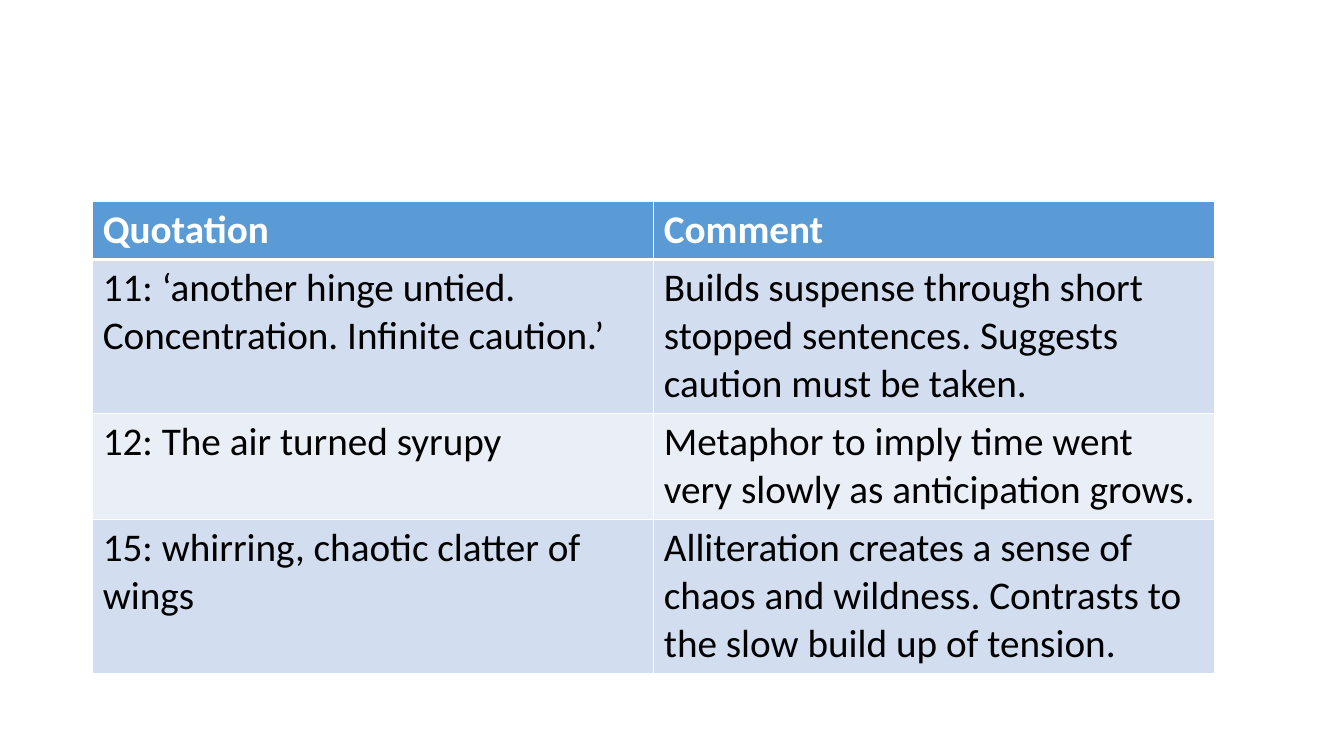
from lxml.etree import SubElement
from pptx import Presentation
from pptx.dml.color import RGBColor
from pptx.oxml.ns import qn
from pptx.util import Inches, Pt

COLORS = {"header": "5B9BD5", "odd": "D2DEEF", "even": "EAEFF7",
          "white": "FFFFFF", "black": "000000"}

ROWS = [
    (1, "Quotation", "Comment"),
    (3, "11: ‘another hinge untied. Concentration. Infinite caution.’",
     "Builds suspense through short stopped sentences. Suggests caution must be taken."),
    (2, "12: The air turned syrupy",
     "Metaphor to imply time went very slowly as anticipation grows."),
    (3, "15: whirring, chaotic clatter of wings",
     "Alliteration creates a sense of chaos and wildness. "
     "Contrasts to the slow build up of tension."),
]


class Deck:
    font = {"name": "Calibri", "size": Pt(28)}
    line_height = Inches(0.47)
    cell_padding = Inches(0.1)

    def __init__(self, width, height):
        self.prs = Presentation()
        self.prs.slide_width, self.prs.slide_height = Inches(width), Inches(height)
        self.s = self.prs.slides.add_slide(self.prs.slide_layouts[6])

    def x(self, share):
        return round(self.prs.slide_width * share)

    def y(self, share):
        return round(self.prs.slide_height * share)

    def text(self, tf, text, **fmt):
        r = tf.paragraphs[0].add_run()
        r.text = text
        color = fmt.pop("color")
        for name, value in {**self.font, **fmt}.items():
            setattr(r.font, name, value)
        r.font.color.rgb = RGBColor.from_string(COLORS[color])

    def borders(self, cell, **widths):
        tcPr = cell._tc.get_or_add_tcPr()
        for side in "LRTB":
            ln = SubElement(tcPr, qn(f"a:ln{side}"), w=str(Pt(widths.get(side, 1))))
            fill = SubElement(ln, qn("a:solidFill"))
            SubElement(fill, qn("a:srgbClr"), val=COLORS["white"])

    def cell(self, cell, row, text):
        header = row == 0
        self.borders(cell, T=3 if row == 1 else 1, B=3 if header else 1)
        cell.fill.solid()
        shade = "header" if header else "odd" if row % 2 else "even"
        cell.fill.fore_color.rgb = RGBColor.from_string(COLORS[shade])
        self.text(cell.text_frame, text, bold=header,
                  color="white" if header else "black")

    def table(self, left, top, width, rows):
        heights = [self.cell_padding + self.line_height * lines for lines, *_ in rows]
        tbl = self.s.shapes.add_table(len(rows), len(rows[0]) - 1, self.x(left),
                                      self.y(top), self.x(width), sum(heights)).table
        for i, (_, *texts) in enumerate(rows):
            tbl.rows[i].height = heights[i]
            for j, text in enumerate(texts):
                self.cell(tbl.cell(i, j), i, text)


def main():
    deck = Deck(13.33, 7.5)
    deck.table(0.069, 2 / 7.5, 0.835, ROWS)
    deck.prs.save("out.pptx")


if __name__ == "__main__":
    main()
